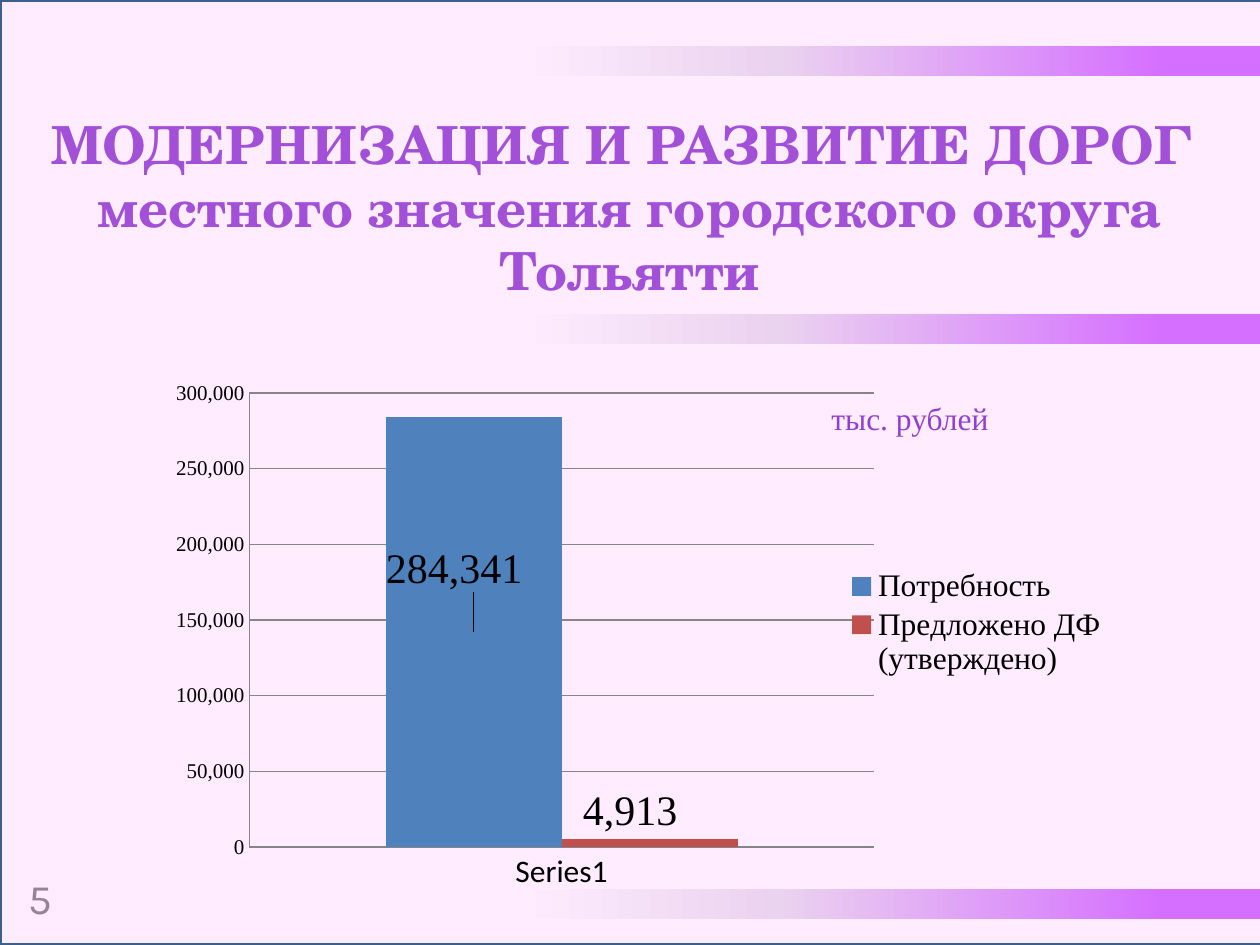
from copy import deepcopy
from dataclasses import dataclass

from pptx import Presentation
from pptx.chart.data import CategoryChartData
from pptx.dml.color import RGBColor
from pptx.enum.chart import XL_CHART_TYPE as Chart, XL_LABEL_POSITION as LabelPos
from pptx.enum.chart import XL_LEGEND_POSITION as LegendPos, XL_TICK_MARK as Tick
from pptx.enum.shapes import MSO_SHAPE as Shape
from pptx.enum.text import MSO_ANCHOR as Anchor, MSO_AUTO_SIZE as AutoSize, PP_ALIGN as Align
from pptx.oxml import parse_xml
from pptx.oxml.ns import nsdecls, qn
from pptx.util import Emu, Pt


@dataclass(frozen=True)
class Theme:
    accent: str = "8F40D0"
    number: str = "808080"
    veil: str = "FF99FF"
    frame: str = "3A5F8C"
    grid: str = "868686"
    text: str = "000000"
    need: str = "4F81BD"
    offered: str = "C0504D"
    band: tuple = ((0.13, "CC66FF"), (0.65, "E6E0EC"), (1, "FFFFFF"))
    title_font: str = "TeX Gyre Schola"
    number_font: str = "Karla"
    serif: str = "Times New Roman"
    sans: str = "Calibri"
    title_size: int = 30
    large: int = 24
    body: int = 18
    small: int = 12


THEME = Theme()


def px(n):
    return Emu(round(n * 914400 / 126))


def box(*lengths):
    return [px(n) for n in lengths]


def rgb(value):
    return RGBColor.from_string(value)


def style(font, name, size, color, bold=False):
    font.name, font.size, font.bold = name, Pt(size), bold
    font.color.rgb = rgb(color)


def add_title(slide, text):
    sp = slide.shapes.title
    sp.left, sp.top, sp.width, sp.height = box(0, 106, 1260, 204)
    tf = sp.text_frame
    tf.text = text
    tf.word_wrap = True
    tf.auto_size = AutoSize.NONE
    tf.vertical_anchor = Anchor.TOP
    p = tf.paragraphs[0]
    p.alignment = Align.CENTER
    style(p.font, THEME.title_font, THEME.title_size, THEME.accent, bold=True)


def add_label(slide, text, area, font, size, color):
    tf = slide.shapes.add_textbox(*box(*area)).text_frame
    tf.word_wrap = False
    p = tf.paragraphs[0]
    p.text = text
    style(p.font, font, size, color)


def add_band(slide, top):
    sp = slide.shapes.add_shape(Shape.RECTANGLE, *box(520, top, 740, 30))
    sp.shadow.inherit = False
    sp.line.fill.background()
    sp.fill.gradient()
    sp.fill.gradient_angle = 180
    # The default gradient has two stops; a third is needed
    stops = sp._element.spPr.find(qn("a:gradFill")).find(qn("a:gsLst"))
    stops.append(deepcopy(stops[-1]))
    for stop, (position, color) in zip(sp.fill.gradient_stops, THEME.band):
        stop.position = position
        stop.color.rgb = rgb(color)


def add_veil(slide):
    sp = slide.shapes.add_shape(Shape.RECTANGLE, *box(0, 0, 1262, 945))
    sp.shadow.inherit = False
    sp.fill.solid()
    sp.fill.fore_color.rgb = rgb(THEME.veil)
    color = sp._element.spPr.find(qn("a:solidFill"))[0]
    color.append(parse_xml(f'<a:alpha {nsdecls("a")} val="18000"/>'))
    sp.line.color.rgb = rgb(THEME.frame)
    sp.line.width = Pt(2)


def manual_layout(**values):
    """Values are fractions of the chart, in schema order."""
    items = "".join(f'<c:{key} val="{value}"/>' for key, value in values.items())
    return parse_xml(f'<c:layout {nsdecls("c")}><c:manualLayout>{items}'
                     "</c:manualLayout></c:layout>")


def set_layout(parent, layout, after=None):
    for old in parent.findall(qn("c:layout")):
        parent.remove(old)
    if after is None:
        parent.insert(0, layout)
    else:
        parent.find(qn(after)).addnext(layout)


def format_axes(chart):
    for axis in (chart.category_axis, chart.value_axis):
        axis.major_tick_mark = axis.minor_tick_mark = Tick.NONE
        axis.format.line.color.rgb = rgb(THEME.grid)
    axis = chart.value_axis
    axis.minimum_scale, axis.maximum_scale, axis.major_unit = 0, 300000, 50000
    axis.has_major_gridlines = True
    axis.major_gridlines.format.line.color.rgb = rgb(THEME.grid)
    axis.tick_labels.number_format = "#,##0"
    axis.tick_labels.number_format_is_linked = False
    style(axis.tick_labels.font, THEME.serif, THEME.small, THEME.text)


def format_series(series, color, position, dx, dy):
    series.format.fill.solid()
    series.format.fill.fore_color.rgb = rgb(color)
    label = series.points[0].data_label
    style(label.font, THEME.serif, THEME.large, THEME.text)
    label.position = position
    # Shift the label from its standard place
    dLbl = series._element.find(qn("c:dLbls")).find(qn("c:dLbl"))
    set_layout(dLbl, manual_layout(x=dx, y=dy), after="c:idx")


def add_column_chart(slide):
    data = CategoryChartData(number_format="#,##0")
    data.categories = ["Series1"]
    data.add_series("Потребность", [284341])
    data.add_series("Предложено ДФ (утверждено)", [4913])
    area = box(142, 367, 976, 523)
    chart = slide.shapes.add_chart(Chart.COLUMN_CLUSTERED, *area, data).chart
    style(chart.font, THEME.sans, THEME.body, THEME.text)
    chart.has_title = False
    format_axes(chart)

    plot = chart.plots[0]
    plot.gap_width, plot.overlap, plot.vary_by_categories = 155, 0, False
    need, offered = plot.series
    format_series(need, THEME.need, LabelPos.CENTER, -0.02, -0.12)
    format_series(offered, THEME.offered, LabelPos.OUTSIDE_END, -0.02, 0)
    set_layout(chart._chartSpace.chart.plotArea, manual_layout(
        layoutTarget="inner", xMode="edge", yMode="edge", x=0.11, y=0.05, w=0.64, h=0.87))

    chart.has_legend = True
    legend = chart.legend
    legend.position = LegendPos.RIGHT
    legend.include_in_layout = False
    style(legend.font, THEME.serif, THEME.body, THEME.text)
    set_layout(legend._element, manual_layout(
        xMode="edge", yMode="edge", x=0.72, y=0.38, w=0.27, h=0.22), after="c:legendPos")


def main():
    prs = Presentation()
    prs.slide_width, prs.slide_height = px(1260), px(945)
    slide = prs.slides.add_slide(prs.slide_layouts[5])

    # Text and decoration beneath the tinted veil
    add_title(slide, "МОДЕРНИЗАЦИЯ И РАЗВИТИЕ ДОРОГ \vместного значения городского округа Тольятти")
    add_label(slide, "5", (16, 866, 39, 63), THEME.number_font, THEME.large, THEME.number)
    for top in (46, 314, 889):
        add_band(slide, top)
    add_veil(slide)

    # Chart and its unit
    add_column_chart(slide)
    add_label(slide, "тыс. рублей", (819, 393, 184, 50), THEME.serif, THEME.body, THEME.accent)
    prs.save("out.pptx")


if __name__ == "__main__":
    main()
